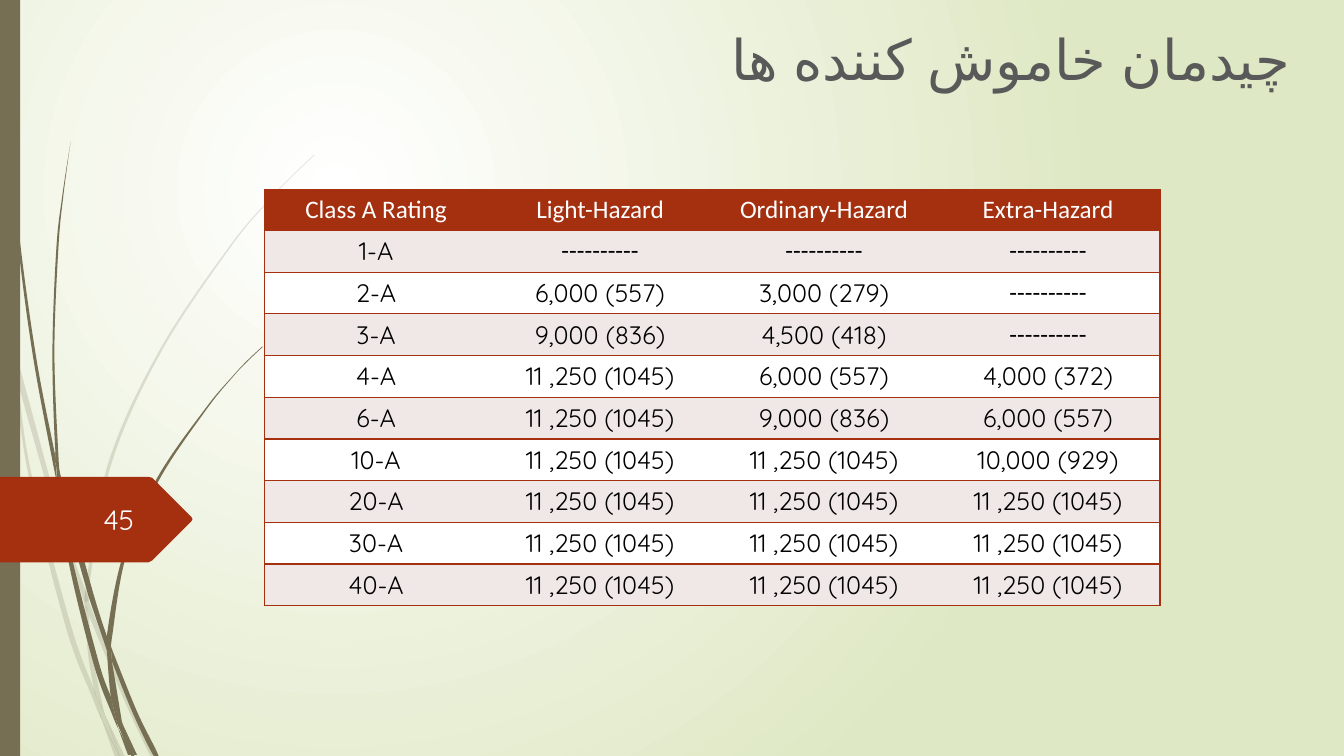
from lxml import etree
from pptx import Presentation
from pptx.dml.color import RGBColor
from pptx.enum.shapes import MSO_SHAPE
from pptx.enum.text import MSO_ANCHOR, PP_ALIGN
from pptx.oxml import parse_xml
from pptx.oxml.ns import nsdecls, qn
from pptx.util import Pt

RECTANGLE = MSO_SHAPE.RECTANGLE
MIDDLE = MSO_ANCHOR.MIDDLE
CENTER, RIGHT = PP_ALIGN.CENTER, PP_ALIGN.RIGHT

OLIVE = RGBColor(0x76, 0x6F, 0x54)
RUST = RGBColor(0xA5, 0x30, 0x10)
BLUSH = RGBColor(0xF0, 0xE8, 0xE7)
WHITE = RGBColor(0xFF, 0xFF, 0xFF)
NUMBER_WHITE = RGBColor(0xFE, 0xFF, 0xFF)
BLACK = RGBColor(0, 0, 0)
GRAY = RGBColor(0x59, 0x59, 0x59)
MEADOW = RGBColor(0xDF, 0xE8, 0xC4)

BODY_FONT, TABLE_FONT = "Quicksand", "Calibri"

TITLE = "چیدمان خاموش کننده ها"
PAGE_NUMBER = "45"
NONE = "----------"
MAXIMUM = "11 ,250 (1045)"
RATINGS = [
    ("Class A Rating", "Light-Hazard", "Ordinary-Hazard", "Extra-Hazard"),
    ("1-A", NONE, NONE, NONE),
    ("2-A", "6,000 (557)", "3,000 (279)", NONE),
    ("3-A", "9,000 (836)", "4,500 (418)", NONE),
    ("4-A", MAXIMUM, "6,000 (557)", "4,000 (372)"),
    ("6-A", MAXIMUM, "9,000 (836)", "6,000 (557)"),
    ("10-A", MAXIMUM, MAXIMUM, "10,000 (929)"),
    ("20-A", MAXIMUM, MAXIMUM, MAXIMUM),
    ("30-A", MAXIMUM, MAXIMUM, MAXIMUM),
    ("40-A", MAXIMUM, MAXIMUM, MAXIMUM),
]

# Each grass blade is a pair of edges, down one side and back up the other,
# on a grid with steps of 0.72 pt.
GRID = 0.72
PALE_BLADES = [
    ([(11, 350), (9, 322), (0, 282)], [(0, 299), (10, 344), (11, 350)]),
    ([(58, 522), (84, 599)], [(85, 586), (62, 520), (14, 345), (17, 376), (58, 522)]),
    ([(92, 607), (88, 596)], [(88, 610), (123, 694), (150, 751), (155, 751), (127, 692), (92, 607)]),
    ([(119, 751), (124, 751)], [(105, 711), (119, 751)]),
    ([(93, 683), (70, 619), (31, 469), (17, 376), (11, 350)],
     [(11, 350), (28, 470), (65, 621), (92, 693), (101, 714), (99, 707), (93, 683)]),
    ([(84, 599), (87, 646), (93, 683), (96, 692), (105, 711)],
     [(103, 706), (91, 646), (88, 610), (84, 599)]),
    ([(88, 584), (110, 462), (160, 349), (229, 245), (268, 198), (290, 175), (312, 154)],
     [(312, 153), (289, 175), (268, 197), (228, 244), (158, 348), (107, 461), (85, 584), (88, 596)]),
    ([(101, 714), (114, 751)], [(119, 751), (101, 714)]),
    ([(88, 608), (88, 596)], [(85, 586), (84, 599), (88, 608)]),
    ([(96, 692), (93, 683)], [(99, 707), (101, 714), (119, 751), (105, 711), (96, 692)]),
]
DARK_BLADES = [
    ([(7, 110), (17, 233), (33, 355), (56, 477), (57, 481)],
     [(55, 457), (55, 453), (36, 355), (19, 232), (8, 109), (5, 48), (4, 0), (3, 0), (4, 48), (7, 110)]),
    ([(88, 592), (106, 645)], [(106, 631), (93, 590), (60, 472), (64, 505), (88, 592)]),
    ([(113, 649), (110, 641)], [(111, 656), (132, 708), (152, 749), (157, 749), (136, 706), (113, 649)]),
    ([(110, 691), (98, 657), (72, 556), (64, 505), (57, 477)],
     [(57, 477), (68, 557), (93, 659), (111, 708), (117, 722), (116, 717), (110, 691)]),
    ([(60, 472), (58, 453), (54, 349), (58, 245), (63, 193), (70, 141)],
     [(70, 141), (62, 193), (56, 245), (52, 349), (55, 449), (60, 472)]),
    ([(133, 749), (136, 749)], [(122, 719), (133, 749)]),
    ([(57, 477), (64, 505)], [(60, 472), (55, 449), (55, 453), (57, 477)]),
    ([(111, 633), (125, 552), (158, 476), (205, 406), (231, 374), (245, 359), (261, 344)],
     [(260, 344), (245, 358), (231, 373), (204, 405), (156, 474), (122, 551), (106, 631), (110, 641)]),
    ([(117, 722), (127, 749)], [(131, 749), (117, 722)]),
    ([(106, 645), (110, 691), (116, 706), (122, 719)],
     [(121, 716), (111, 656), (109, 651), (106, 645)]),
    ([(106, 645), (111, 656)], [(110, 641), (106, 631), (106, 645)]),
    ([(116, 706), (110, 691)], [(116, 717), (130, 749), (133, 749), (122, 719), (116, 706)]),
]
NUMBER_TAG = [(0, 473), (147, 473), (151, 474), (190, 513), (191, 515),
              (190, 517), (151, 556), (147, 558), (0, 558)]

SLIDE_W, SLIDE_H = 960, 540
TABLE_LEFT, TABLE_TOP, COLUMN_W = 188.64, 135.36, 160
HEADER_H, ROW_H = 29.23, 29.8
FINE = 10


def paint(shape, color, opacity=100):
    shape.shadow.inherit = False
    shape.fill.solid()
    shape.fill.fore_color.rgb = color
    shape.line.fill.background()
    if opacity < 100:
        tint = shape.fill._xPr.find(qn("a:solidFill"))[0]
        etree.SubElement(tint, qn("a:alpha"), val=str(opacity * 1000))


def add_outline(slide, points, color, opacity=100):
    fine = [(x * FINE, y * FINE) for x, y in points]
    builder = slide.shapes.build_freeform(*fine[0], scale=Pt(GRID) / FINE)
    builder.add_line_segments(fine[1:], close=True)
    shape = builder.convert_to_shape()
    paint(shape, color, opacity)
    return shape


def curve_edge(edge, lines, left, top):
    """Turn the straight segments of an edge into a smooth Bezier curve."""
    padded = [edge[0], *edge, edge[-1]]
    for line, a, b, c, d in zip(lines, padded, padded[1:], padded[2:], padded[3:]):
        controls = [[q + (r - p) / 6 for p, q, r in zip(a, b, c)],
                    [r - (s - q) / 6 for q, r, s in zip(b, c, d)], c]
        line.tag = qn("a:cubicBezTo")
        line.clear()
        for x, y in controls:
            etree.SubElement(line, qn("a:pt"), x=str(round((x - left) * FINE)),
                             y=str(round((y - top) * FINE)))


def add_blade(slide, down, back, opacity):
    points = down + back
    blade = add_outline(slide, points, OLIVE, opacity)
    left, top = (min(axis) for axis in zip(*points))
    geometry = blade._element.spPr.find(qn("a:custGeom"))
    for start, edge in ((0, down), (len(down), back)):
        segments = [e for e in geometry.iter(qn("a:moveTo"), qn("a:lnTo"), qn("a:cubicBezTo"))]
        curves = segments[start + 1:start + len(edge)]
        for old in curves:
            new = etree.Element(qn("a:cubicBezTo"))
            old.getparent().replace(old, new)
        segments = [e for e in geometry.iter(qn("a:moveTo"), qn("a:lnTo"), qn("a:cubicBezTo"))]
        curve_edge(edge, segments[start + 1:start + len(edge)], left, top)


def format_text(paragraph, align, font, size, color):
    paragraph.alignment = align
    for run in paragraph.runs:
        run.font.name, run.font.size, run.font.bold = font, Pt(size), False
        run.font.color.rgb = color


def add_text(slide, text, box, size, color):
    frame = slide.shapes.add_textbox(*map(Pt, box)).text_frame
    frame.word_wrap = True
    frame.vertical_anchor = MIDDLE
    frame.text = text
    format_text(frame.paragraphs[0], RIGHT, BODY_FONT, size, color)
    return frame.paragraphs[0]


def add_title(slide):
    title = add_text(slide, TITLE, (226.8, 5.76, 702, 72), 40, GRAY)
    title.space_before = Pt(10)
    title._p.get_or_add_pPr().set("rtl", "1")
    properties = title.runs[0]._r.get_or_add_rPr()
    properties.set("lang", "fa-IR")
    etree.SubElement(properties, qn("a:cs"), typeface=BODY_FONT)


def set_borders(cell, first, last):
    """Rules above and below every cell; sides only at the table's edges."""
    for side, drawn in (("L", first), ("R", last), ("T", True), ("B", True)):
        fill = f'<a:solidFill><a:srgbClr val="{RUST}"/></a:solidFill>' if drawn else "<a:noFill/>"
        cell._tc.get_or_add_tcPr().append(parse_xml(
            f'<a:ln{side} {nsdecls("a")} w="{Pt(1)}">{fill}</a:ln{side}>'))


def add_ratings(slide):
    rows, columns = len(RATINGS), len(RATINGS[0])
    table = slide.shapes.add_table(rows, columns, Pt(TABLE_LEFT), Pt(TABLE_TOP), Pt(COLUMN_W * columns),
                                   Pt(HEADER_H + ROW_H * (rows - 1))).table
    for r, rating in enumerate(RATINGS):
        table.rows[r].height = Pt(ROW_H if r else HEADER_H)
        for c, text in enumerate(rating):
            cell = table.cell(r, c)
            set_borders(cell, c == 0, c == columns - 1)
            cell.fill.solid()
            cell.fill.fore_color.rgb = RUST if r == 0 else BLUSH if r % 2 else WHITE
            cell.vertical_anchor = MIDDLE
            cell.text_frame.text = text
            font = TABLE_FONT if r == 0 or text == NONE else BODY_FONT
            format_text(cell.text_frame.paragraphs[0], CENTER, font, 18, BLACK if r else WHITE)


def set_background(slide):
    slide._element.cSld.insert(0, parse_xml(
        f'<p:bg {nsdecls("p", "a")}><p:bgPr><a:gradFill rotWithShape="1"><a:gsLst>'
        f'<a:gs pos="0"><a:srgbClr val="{WHITE}"/></a:gs>'
        f'<a:gs pos="100000"><a:srgbClr val="{MEADOW}"/></a:gs></a:gsLst>'
        '<a:path path="circle"><a:fillToRect l="50000" t="50000" r="100000" b="100000"/></a:path>'
        '</a:gradFill><a:effectLst/></p:bgPr></p:bg>'))


def main():
    deck = Presentation()
    deck.slide_width, deck.slide_height = Pt(SLIDE_W), Pt(SLIDE_H)
    slide = deck.slides.add_slide(deck.slide_layouts[6])
    set_background(slide)
    for blades, opacity in ((PALE_BLADES, 20), (DARK_BLADES, 100)):
        for down, back in blades:
            add_blade(slide, down, back, opacity)
    side_bar = slide.shapes.add_shape(RECTANGLE, 0, 0, Pt(14.4), Pt(SLIDE_H))
    paint(side_bar, OLIVE)
    add_outline(slide, NUMBER_TAG, RUST)
    add_title(slide)
    add_text(slide, PAGE_NUMBER, (41.76, 356.4, 61.2, 28.8), 20, NUMBER_WHITE)
    add_ratings(slide)
    deck.save("out.pptx")


if __name__ == "__main__":
    main()
